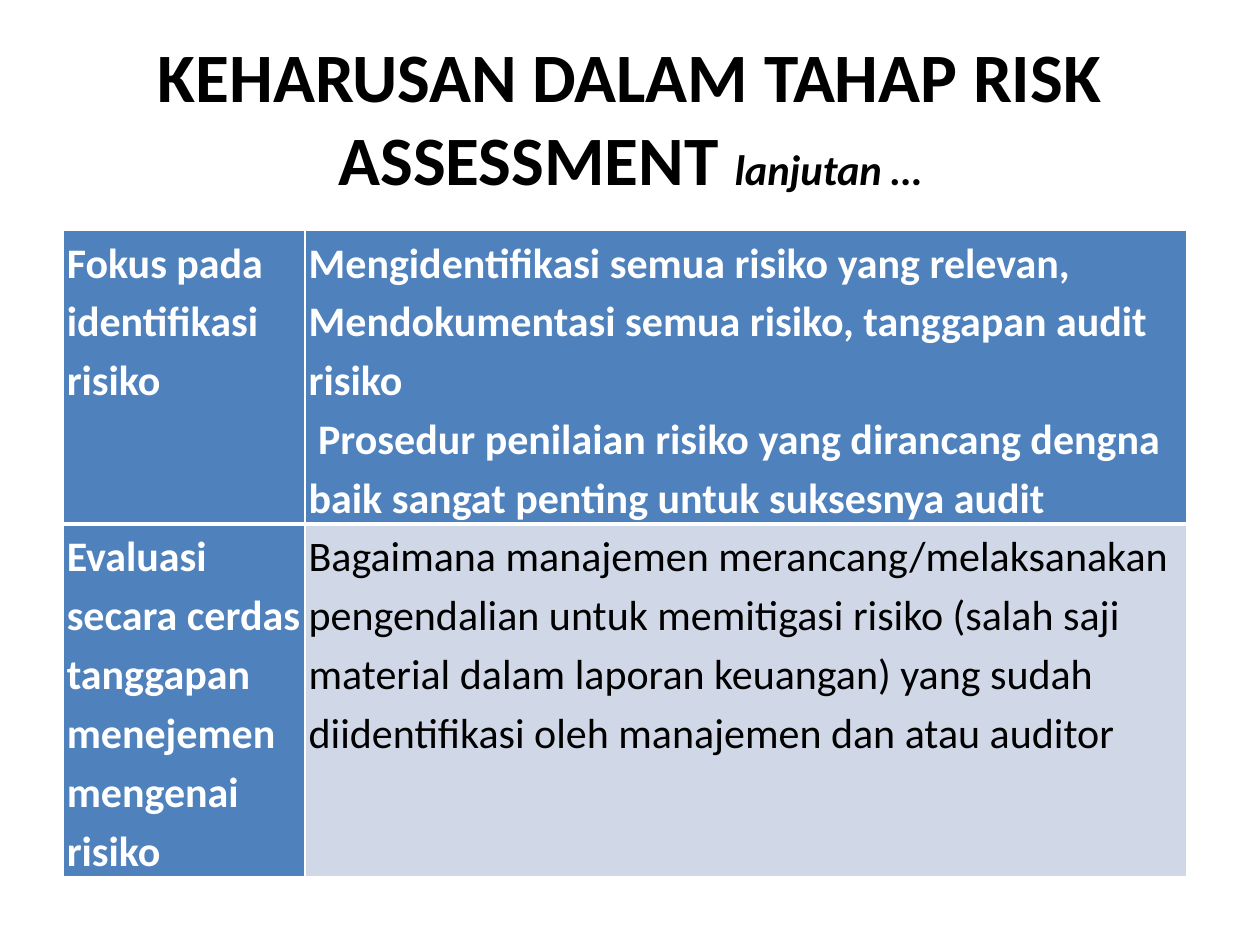
from pptx import Presentation
from pptx.dml.color import RGBColor
from pptx.enum.text import MSO_ANCHOR, PP_ALIGN
from pptx.oxml.ns import qn
from pptx.util import Inches, Pt
from lxml import etree

MIDDLE = MSO_ANCHOR.MIDDLE
CENTER = PP_ALIGN.CENTER
COLORS = {"ink": "000000", "white": "FFFFFF", "blue": "4F81BD", "pale": "D0D8E8"}
COLUMN_WIDTHS = [1.92, 7]
ROW_HEIGHTS = [2.33, 2.8]
TITLE = [
    ("KEHARUSAN DALAM TAHAP RISK ASSESSMENT ", 39.6, False),
    ("lanjutan …", 24.3, True),
]
ROWS = [
    [
        "Fokus pada identifikasi risiko",
        "Mengidentifikasi semua risiko yang relevan, Mendokumentasi semua risiko, "
        "tanggapan audit risiko\n"
        " Prosedur penilaian risiko yang dirancang dengna baik sangat penting "
        "untuk suksesnya audit",
    ],
    [
        "Evaluasi secara cerdas tanggapan menejemen mengenai risiko",
        "Bagaimana manajemen merancang/melaksanakan pengendalian untuk memitigasi "
        "risiko (salah saji material dalam laporan keuangan) yang sudah "
        "diidentifikasi oleh manajemen dan atau auditor",
    ],
]


class SlideBuilder:
    font = "Calibri"
    table_size = 24
    line_spacing = 1.15

    def __init__(self, slide):
        self.slide = slide

    def style(self, span, size, color, bold=True, italic=False):
        span.font.name = self.font
        span.font.size = Pt(size)
        span.font.bold = bold
        span.font.italic = italic
        span.font.color.rgb = RGBColor.from_string(COLORS[color])

    def title(self, left, top, width, height, spans):
        box = self.slide.shapes.add_textbox(
            Inches(left), Inches(top), Inches(width), Inches(height)
        )
        frame = box.text_frame
        frame.word_wrap = True
        frame.vertical_anchor = MIDDLE
        para = frame.paragraphs[0]
        para.alignment = CENTER
        for text, size, italic in spans:
            span = para.add_run()
            span.text = text
            self.style(span, size, "ink", italic=italic)

    def border(self, cell, side, points):
        properties = cell._tc.get_or_add_tcPr()
        line = etree.SubElement(properties, qn(f"a:ln{side}"), w=str(Pt(points)))
        fill = etree.SubElement(line, qn("a:solidFill"))
        etree.SubElement(fill, qn("a:srgbClr"), val=COLORS["white"])

    def cell(self, cell, text, is_heading, top_border, bottom_border):
        cell.margin_left = cell.margin_right = Inches(0.03)
        cell.margin_top = cell.margin_bottom = 0
        for side, points in zip("LRTB", (1, 1, top_border, bottom_border)):
            self.border(cell, side, points)
        cell.fill.solid()
        cell.fill.fore_color.rgb = RGBColor.from_string(
            COLORS["blue" if is_heading else "pale"]
        )
        cell.text_frame.text = text
        for para in cell.text_frame.paragraphs:
            para.line_spacing = self.line_spacing
            for span in para.runs:
                color = "white" if is_heading else "ink"
                self.style(span, self.table_size, color, bold=is_heading)

    def table(self, left, top, widths, heights, rows):
        table = self.slide.shapes.add_table(
            len(rows), len(widths), Inches(left), Inches(top),
            Inches(sum(widths)), Inches(sum(heights)),
        ).table
        for column, width in zip(table.columns, widths):
            column.width = Inches(width)
        for row, height in zip(table.rows, heights):
            row.height = Inches(height)
        for r, texts in enumerate(rows):
            for c, text in enumerate(texts):
                self.cell(
                    table.cell(r, c), text,
                    is_heading=r == 0 or c == 0,
                    top_border=3 if r == 1 else 1,
                    bottom_border=3 if r == 0 else 1,
                )


def main():
    deck = Presentation()
    deck.slide_width = Inches(10)
    deck.slide_height = Inches(7.5)
    page = SlideBuilder(deck.slides.add_slide(deck.slide_layouts[6]))
    page.title(0.5, 0.3, 9, 1.25, TITLE)
    page.table(0.5, 1.83, COLUMN_WIDTHS, ROW_HEIGHTS, ROWS)
    deck.save("out.pptx")


if __name__ == "__main__":
    main()
